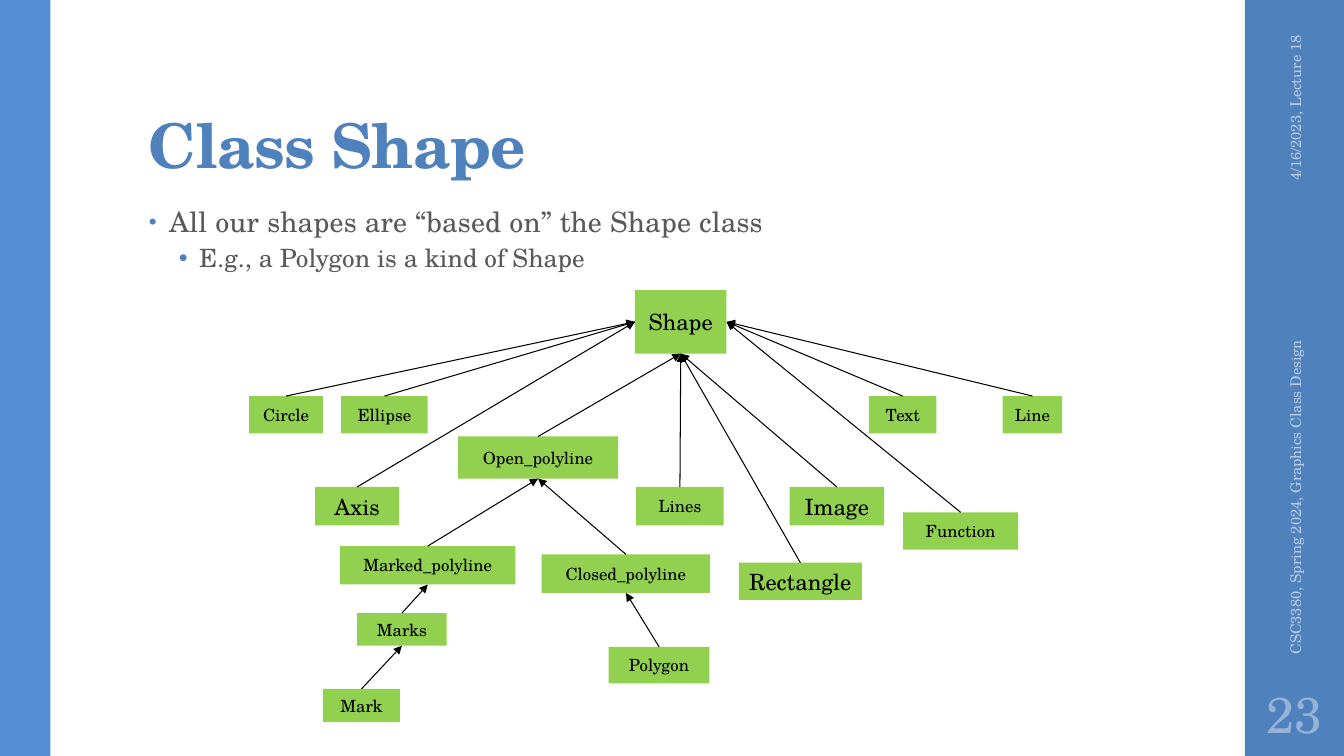
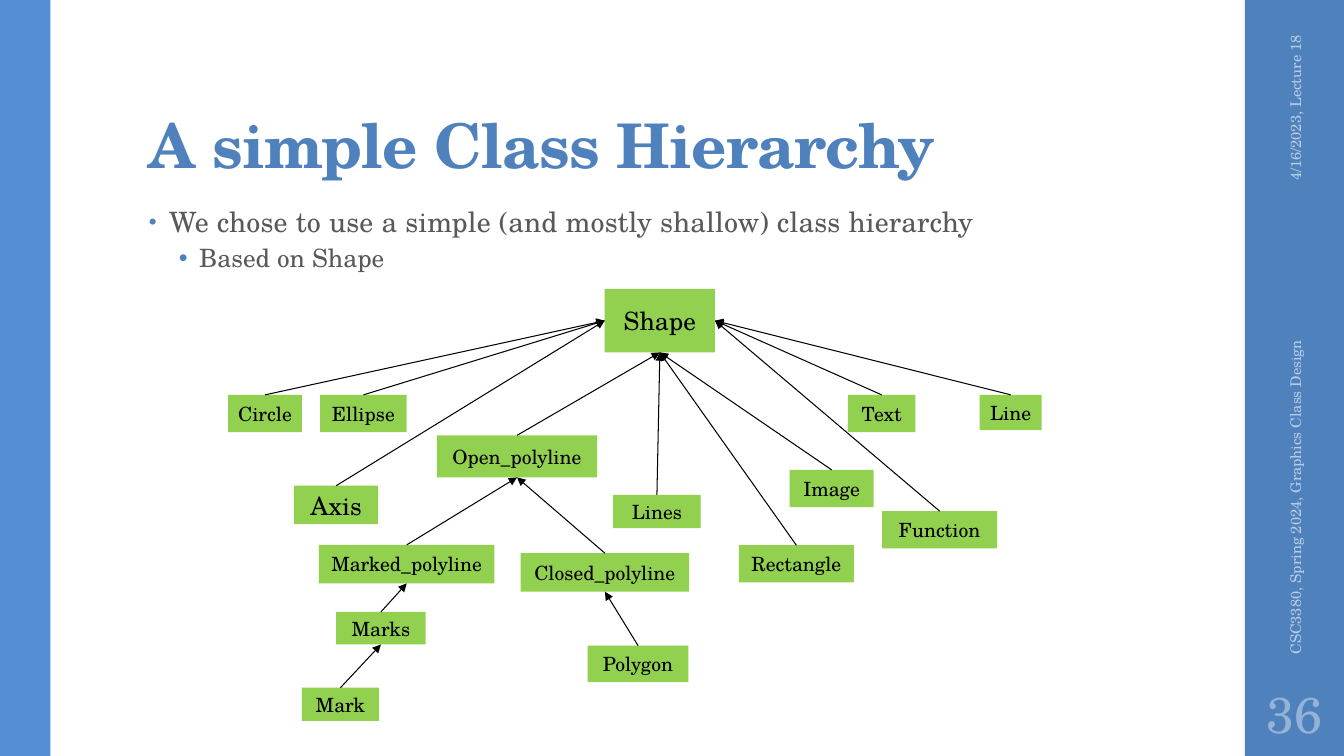
"""Build two slides that show a class hierarchy of graphics shapes."""

from dataclasses import dataclass, field, replace

from lxml.etree import SubElement
from pptx import Presentation
from pptx.dml.color import RGBColor
from pptx.enum.shapes import MSO_CONNECTOR as Connector
from pptx.enum.shapes import MSO_SHAPE as Preset
from pptx.enum.text import MSO_ANCHOR as Anchor
from pptx.enum.text import MSO_AUTO_SIZE as AutoSize
from pptx.enum.text import PP_ALIGN as Align
from pptx.oxml.ns import qn
from pptx.util import Cm, Pt

FONT = "TeX Gyre Schola"
BLUE = RGBColor(0x4F, 0x81, 0xBD)
LIGHT_BLUE = RGBColor(0x55, 0x8E, 0xD5)
PALE_BLUE = RGBColor(0xB9, 0xCD, 0xE5)
NUMBER_BLUE = RGBColor(0x95, 0xB3, 0xD7)
GREY = RGBColor(0x59, 0x59, 0x59)
GREEN = RGBColor(0x92, 0xD0, 0x50)
BLACK = RGBColor(0, 0, 0)

SLIDE_WIDTH, SLIDE_HEIGHT = 33.87, 19.05
BAND_LEFT, BAND_WIDTH = 31.37, 2.5
TOP, LEFT, BOTTOM, RIGHT = range(4)


@dataclass(frozen=True)
class Box:
    """A rectangle in centimetres."""

    left: float
    top: float
    width: float
    height: float

    def lengths(self) -> tuple[Cm, Cm, Cm, Cm]:
        """Return the four values as slide lengths."""
        return Cm(self.left), Cm(self.top), Cm(self.width), Cm(self.height)

    def moved(self, right: float, down: float) -> "Box":
        """Return the box shifted by the given distances."""
        return replace(self, left=self.left + right, top=self.top + down)


@dataclass(frozen=True)
class ClassNode:
    """A class, its box, and the side of its parent that it points to."""

    name: str
    box: Box
    parent: str = ""
    side: int = BOTTOM


@dataclass(frozen=True)
class BulletStyle:
    """The format of one bullet level."""

    size: float
    indent: float
    line_spacing: float
    before: float
    after: float
    bullet_percent: int
    tracking: float


@dataclass(frozen=True)
class HierarchySlide:
    """The content of one slide and its changes to the shared tree."""

    title: str
    bullets: tuple[str, str]
    number: str
    size: float
    large_size: float
    large_names: set[str]
    shift: tuple[float, float] = (0, 0)
    boxes: dict[str, Box] = field(default_factory=dict)


BULLET_STYLES = (
    BulletStyle(20, 0.51, 0.95, 14, 2, 80, 0.1),
    BulletStyle(18, 1.27, 0.9, 3, 3, 100, 0),
)

NODES = (
    ClassNode("Shape", Box(16, 7.31, 2.31, 1.6)),
    ClassNode("Circle", Box(6.28, 9.98, 1.86, 0.94), "Shape", LEFT),
    ClassNode("Ellipse", Box(8.6, 9.98, 2.18, 0.94), "Shape", LEFT),
    ClassNode("Axis", Box(7.94, 12.27, 2.12, 0.97), "Shape", LEFT),
    ClassNode("Text", Box(21.9, 9.98, 1.7, 0.94), "Shape", RIGHT),
    ClassNode("Line", Box(25.27, 9.98, 1.5, 0.94), "Shape", RIGHT),
    ClassNode("Function", Box(22.76, 12.91, 2.9, 0.94), "Shape", RIGHT),
    ClassNode("Open_polyline", Box(11.54, 11, 4.04, 1.06), "Shape"),
    ClassNode("Lines", Box(16.03, 12.27, 2.21, 0.97), "Shape"),
    ClassNode("Rectangle", Box(18.62, 14.18, 3.1, 0.94), "Shape"),
    ClassNode("Image", Box(19.9, 12.27, 2.38, 0.97), "Shape"),
    ClassNode("Marked_polyline", Box(8.57, 13.76, 4.42, 0.97), "Open_polyline"),
    ClassNode("Closed_polyline", Box(13.65, 13.97, 4.25, 0.97), "Open_polyline"),
    ClassNode("Polygon", Box(15.34, 16.3, 2.54, 0.92), "Closed_polyline"),
    ClassNode("Marks", Box(9, 15.45, 2.26, 0.82), "Marked_polyline"),
    ClassNode("Mark", Box(8.14, 17.36, 1.94, 0.84), "Marks"),
)

SLIDES = (
    HierarchySlide(
        "Class Shape",
        (
            "All our shapes are “based on” the Shape class",
            "E.g., a Polygon is a kind of Shape",
        ),
        "23",
        size=12,
        large_size=16,
        large_names={"Shape", "Axis", "Rectangle", "Image"},
    ),
    HierarchySlide(
        "A simple Class Hierarchy",
        (
            "We chose to use a simple (and mostly shallow) class hierarchy",
            "Based on Shape",
        ),
        "36",
        size=14,
        large_size=18,
        large_names={"Shape", "Axis"},
        shift=(-0.53, -0.03),
        boxes={
            "Shape": Box(15.24, 7.28, 2.78, 1.6),
            "Line": Box(24.69, 9.95, 1.56, 0.89),
            "Lines": Box(15.45, 12.47, 2.21, 0.84),
            "Rectangle": Box(18.62, 13.74, 2.9, 0.94),
            "Image": Box(19.9, 11.84, 2.12, 0.94),
        },
    ),
)


def write_text(
    paragraph,
    text: str,
    *,
    size: float,
    color: RGBColor,
    bold: bool = False,
    align: Align = Align.LEFT,
    tracking: float = 0,
    line_spacing: float = 1,
) -> None:
    """Add one formatted run to a paragraph."""
    paragraph.alignment = align
    paragraph.line_spacing = line_spacing
    run = paragraph.add_run()
    run.text = text
    run.font.name = FONT
    run.font.size = Pt(size)
    run.font.bold = bold
    run.font.color.rgb = color
    if tracking:
        run.font.element.set("spc", str(round(tracking * 100))) if hasattr(
            run.font, "element"
        ) else run._r.get_or_add_rPr().set("spc", str(round(tracking * 100)))


def set_frame(frame, anchor: Anchor, wrap: bool = True) -> None:
    """Set the anchor and wrapping of a text frame of fixed size."""
    frame.auto_size = AutoSize.NONE
    frame.vertical_anchor = anchor
    frame.word_wrap = wrap


def add_rectangle(slide, box: Box, color: RGBColor):
    """Draw a flat filled rectangle without outline."""
    shape = slide.shapes.add_shape(Preset.RECTANGLE, *box.lengths())
    shape.shadow.inherit = False
    shape.fill.solid()
    shape.fill.fore_color.rgb = color
    shape.line.fill.background()
    return shape


def add_label(slide, box: Box, text: str, rotation: float = 0, **style) -> None:
    """Add a vertically centred line of text."""
    shape = slide.shapes.add_textbox(*box.lengths())
    shape.rotation = rotation
    set_frame(shape.text_frame, Anchor.MIDDLE)
    write_text(shape.text_frame.paragraphs[0], text, **style)


def add_frame(slide, number: str) -> None:
    """Draw the side bands, the turned footers and the slide number."""
    add_rectangle(slide, Box(BAND_LEFT, 0, BAND_WIDTH, SLIDE_HEIGHT), BLUE)
    add_rectangle(slide, Box(0, 0, 1.27, SLIDE_HEIGHT), LIGHT_BLUE)
    footer = {"rotation": 270, "size": 10.5, "color": PALE_BLUE}
    add_label(slide, Box(30, 2.77, 5.28, 1.02), "4/16/2023, Lecture 18",
              align=Align.RIGHT, **footer)
    add_label(slide, Box(27.66, 11.25, 9.96, 1.02),
              "CSC3380, Spring 2024, Graphics Class Design", **footer)
    add_label(slide, Box(BAND_LEFT, 17.15, BAND_WIDTH, 1.65), number,
              size=36, color=NUMBER_BLUE, align=Align.CENTER)


def set_title(slide, text: str) -> None:
    """Place and format the title placeholder."""
    title = slide.shapes.title
    title.left, title.top, title.width, title.height = Box(
        3.5, 0.81, 26.92, 3.89
    ).lengths()
    frame = title.text_frame
    set_frame(frame, Anchor.BOTTOM)
    frame.margin_top, frame.margin_bottom = Cm(0.08), Cm(0.13)
    write_text(frame.paragraphs[0], text, size=44, color=BLUE, bold=True,
               tracking=-0.5, line_spacing=0.9)


def add_bullet_mark(paragraph, style: BulletStyle) -> None:
    """Give a paragraph a blue bullet and a hanging indent."""
    properties = paragraph._p.get_or_add_pPr()
    properties.set("marL", str(Cm(style.indent)))
    properties.set("indent", str(-Cm(0.51)))
    color = SubElement(properties, qn("a:buClr"))
    SubElement(color, qn("a:srgbClr"), val=str(BLUE))
    SubElement(properties, qn("a:buSzPct"), val=str(style.bullet_percent * 1000))
    SubElement(properties, qn("a:buFont"), typeface="Arial")
    SubElement(properties, qn("a:buChar"), char="•")


def add_bullets(slide, texts: tuple[str, str]) -> None:
    """Write one bullet for each level."""
    shape = slide.shapes.add_textbox(*Box(3.5, 5.08, 23.88, 2.2).lengths())
    frame = shape.text_frame
    set_frame(frame, Anchor.TOP)
    for level, (text, style) in enumerate(zip(texts, BULLET_STYLES)):
        paragraph = frame.add_paragraph() if level else frame.paragraphs[0]
        paragraph.level = level
        paragraph.space_before = Pt(style.before)
        paragraph.space_after = Pt(style.after)
        write_text(paragraph, text, size=style.size, color=GREY,
                   tracking=style.tracking, line_spacing=style.line_spacing)
        add_bullet_mark(paragraph, style)


def add_arrow(slide, child, parent, side: int) -> None:
    """Connect the top of a child to a side of its parent."""
    arrow = slide.shapes.add_connector(Connector.STRAIGHT, 0, 0, 0, 0)
    arrow.begin_connect(child, TOP)
    arrow.end_connect(parent, side)
    arrow.line.color.rgb = BLACK
    arrow.line.width = Pt(0.75)
    properties = arrow.element.spPr
    SubElement(properties.find(qn("a:ln")), qn("a:tailEnd"), type="triangle")
    SubElement(properties, qn("a:effectLst"))


def add_tree(slide, content: HierarchySlide) -> None:
    """Draw the class boxes and their inheritance arrows."""
    shapes = {}
    for node in NODES:
        box = content.boxes.get(node.name, node.box.moved(*content.shift))
        shape = shapes[node.name] = add_rectangle(slide, box, GREEN)
        set_frame(shape.text_frame, Anchor.MIDDLE, wrap=False)
        large = node.name in content.large_names
        write_text(shape.text_frame.paragraphs[0], node.name, color=BLACK,
                   size=content.large_size if large else content.size,
                   align=Align.CENTER)
        if node.parent:
            add_arrow(slide, shape, shapes[node.parent], node.side)


def main() -> None:
    """Build and save the presentation."""
    presentation = Presentation()
    presentation.slide_width = Cm(SLIDE_WIDTH)
    presentation.slide_height = Cm(SLIDE_HEIGHT)
    for content in SLIDES:
        slide = presentation.slides.add_slide(presentation.slide_layouts[5])
        add_frame(slide, content.number)
        set_title(slide, content.title)
        add_bullets(slide, content.bullets)
        add_tree(slide, content)
    presentation.save("out.pptx")


if __name__ == "__main__":
    main()
